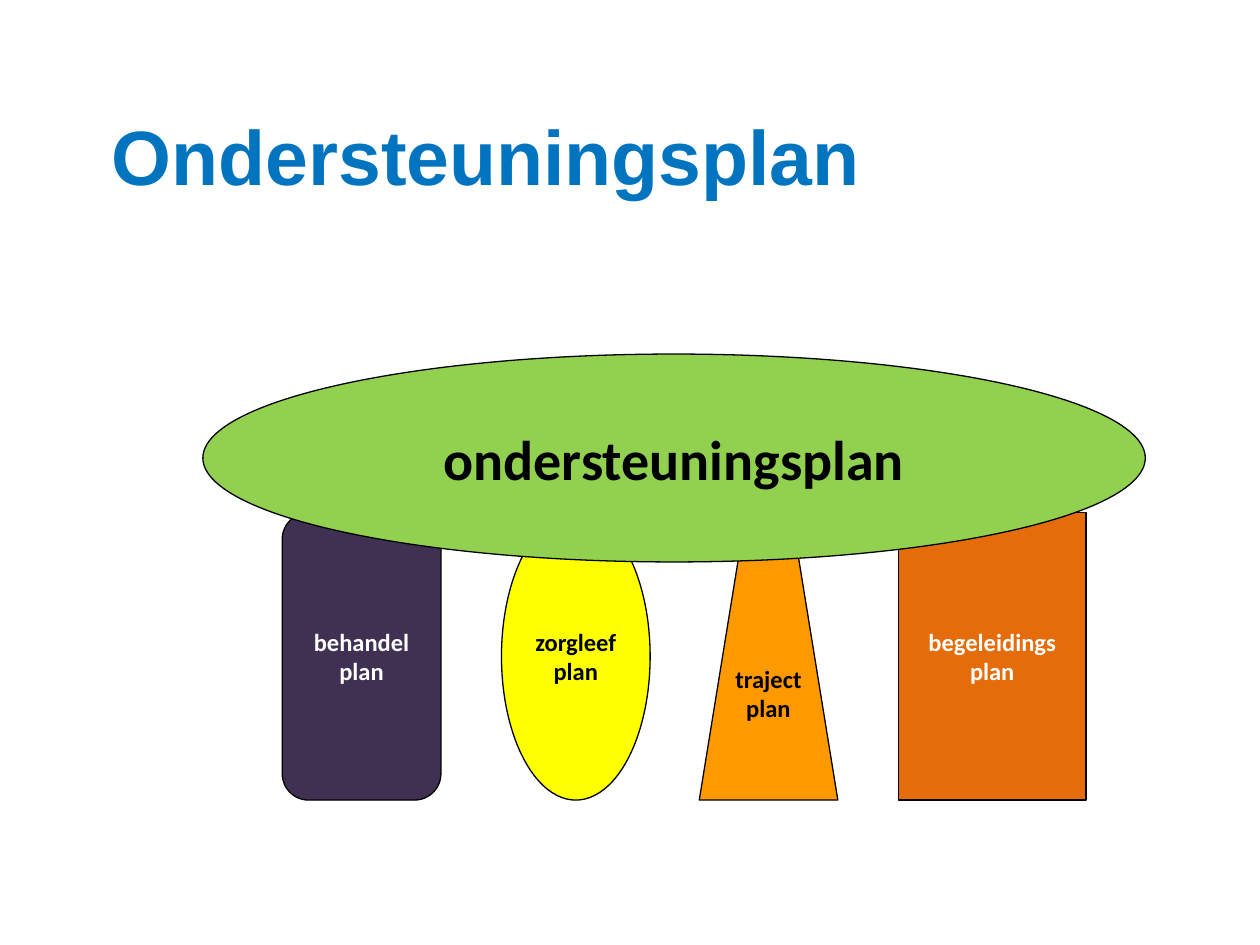
from pptx import Presentation
from pptx.dml.color import RGBColor
from pptx.enum.shapes import MSO_SHAPE
from pptx.enum.text import MSO_ANCHOR, PP_ALIGN
from pptx.util import Inches, Pt

ROUNDED = MSO_SHAPE.ROUNDED_RECTANGLE
RECTANGLE = MSO_SHAPE.RECTANGLE
OVAL = MSO_SHAPE.OVAL
TRIANGLE = MSO_SHAPE.ISOSCELES_TRIANGLE
MIDDLE = MSO_ANCHOR.MIDDLE
CENTER, LEFT = PP_ALIGN.CENTER, PP_ALIGN.LEFT

BLACK = RGBColor(0x00, 0x00, 0x00)
WHITE = RGBColor(0xFF, 0xFF, 0xFF)
BLUE = RGBColor(0x00, 0x74, 0xBF)
PURPLE = RGBColor(0x40, 0x31, 0x52)
DARK_ORANGE = RGBColor(0xE4, 0x6C, 0x0A)
YELLOW = RGBColor(0xFF, 0xFF, 0x00)
ORANGE = RGBColor(0xFF, 0x99, 0x00)
GREEN = RGBColor(0x92, 0xD0, 0x50)

# Legs: preset, left, width, height, fill, text colour, lines
LEGS = [
    (ROUNDED, 2.24, 1.26, 2.28, PURPLE, WHITE, ["behandel", "plan"]),
    (RECTANGLE, 7.13, 1.49, 2.28, DARK_ORANGE, WHITE, ["begeleidings", "plan"]),
    (OVAL, 3.98, 1.18, 2.28, YELLOW, BLACK, ["zorgleef", "plan"]),
    (TRIANGLE, 5.55, 1.1, 3.39, ORANGE, BLACK, ["traject", "plan"]),
]


def write_lines(text_frame, lines, alignment, color, **font_format):
    text_frame.vertical_anchor = MIDDLE
    for index, line in enumerate(lines):
        paragraph = text_frame.paragraphs[0] if index == 0 else text_frame.add_paragraph()
        paragraph.text = line
        paragraph.alignment = alignment
        for name, value in font_format.items():
            setattr(paragraph.font, name, value)
        paragraph.font.color.rgb = color


def add_title(slide, left, top, width, height):
    box = slide.shapes.add_textbox(Inches(left), Inches(top), Inches(width), Inches(height))
    box.text_frame.word_wrap = True
    write_lines(box.text_frame, ["Ondersteuningsplan"], LEFT, BLUE,
                name="Arial", size=Pt(44), bold=True)


def add_part(slide, preset, box, fill, text_color, lines, size):
    shape = slide.shapes.add_shape(preset, *(Inches(length) for length in box))
    shape.shadow.inherit = False
    shape.fill.solid()
    shape.fill.fore_color.rgb = fill
    shape.line.color.rgb = BLACK
    shape.line.width = Pt(0.75)
    shape.text_frame.word_wrap = False
    write_lines(shape.text_frame, lines, CENTER, text_color,
                name="Calibri", size=Pt(size), bold=True)


def add_table_figure(slide, left, top, width, height):
    # Legs share one floor line
    floor = top + height
    for preset, leg_left, leg_width, leg_height, fill, text_color, lines in LEGS:
        box = (leg_left, floor - leg_height, leg_width, leg_height)
        add_part(slide, preset, box, fill, text_color, lines, 14)
    # Table top covers the upper ends of the legs
    add_part(slide, OVAL, (left, top, width, 1.65), GREEN, BLACK,
             ["ondersteuningsplan"], 32)


def main():
    presentation = Presentation()
    presentation.slide_width = Inches(10)
    presentation.slide_height = Inches(7.5)
    slide = presentation.slides.add_slide(presentation.slide_layouts[6])
    add_title(slide, 0.79, 0.6, 8.31, 1.25)
    add_table_figure(slide, 1.61, 2.81, 7.48, 3.54)
    presentation.save("out.pptx")


if __name__ == "__main__":
    main()
